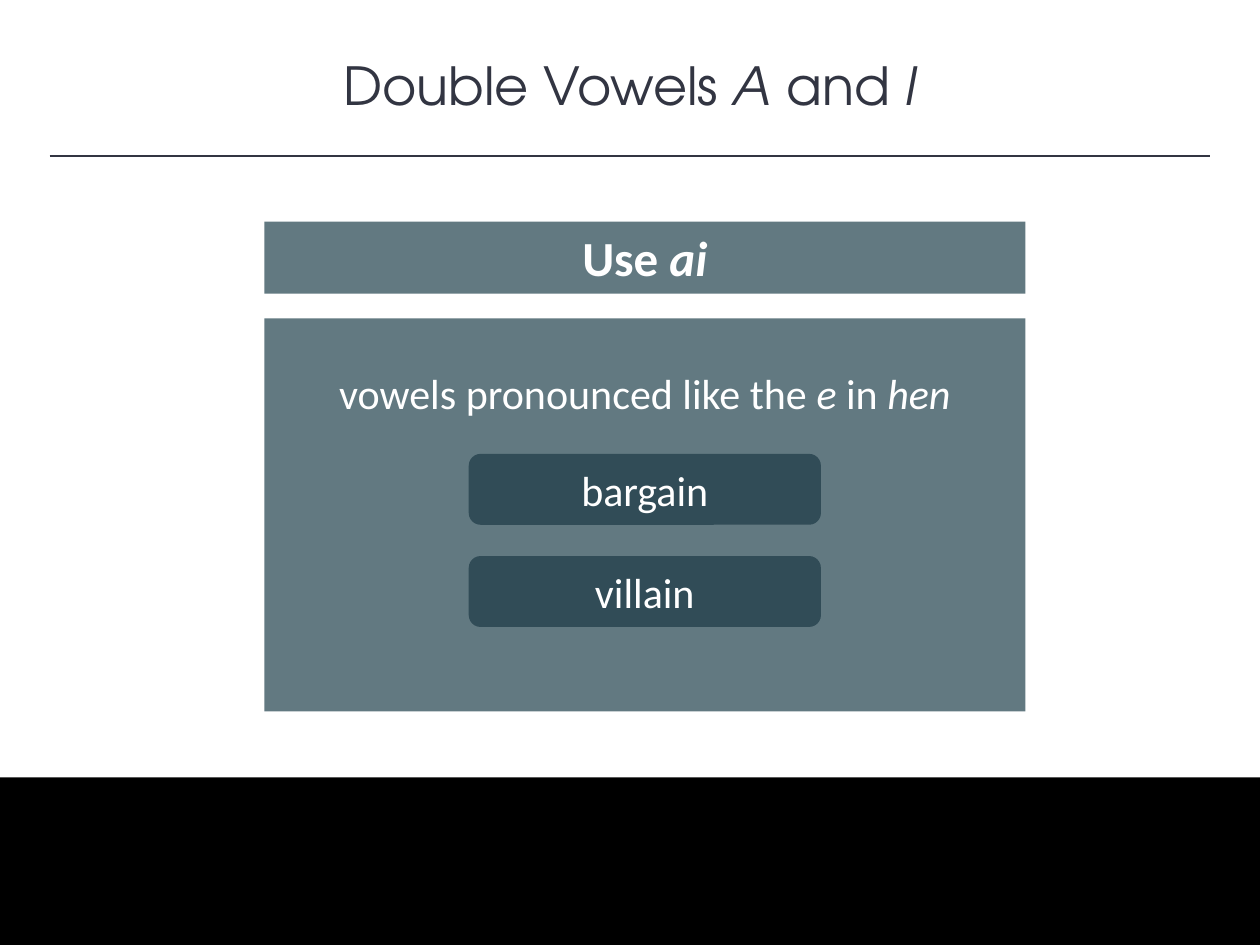
from pptx import Presentation
from pptx.dml.color import RGBColor
from pptx.enum.shapes import MSO_CONNECTOR as Connector, MSO_SHAPE as Shape
from pptx.enum.text import MSO_ANCHOR as Anchor, PP_ALIGN as Align
from pptx.oxml.ns import qn
from pptx.util import Cm, Pt
from lxml.etree import SubElement

COLOURS = {
    "paper": "FFFFFF",
    "ink": "323542",
    "panel": "627981",
    "word": "314C57",
    "band": "000000",
}
PAGE_WIDTH, PAGE_HEIGHT = 25.4, 19.05
PANEL_LEFT, PANEL_WIDTH = 5.33, 15.34
WORD_WIDTH, WORD_HEIGHT = 7.1, 1.43
WORD_TOP, WORD_STEP = 9.15, 2.06


def colour(name):
    return RGBColor.from_string(COLOURS[name])


def write(box, pieces, size=24, font="Calibri", ink="paper", bold=False,
          spacing=None, anchor=Anchor.TOP):
    frame = box.text_frame
    frame.word_wrap = True
    frame.vertical_anchor = anchor
    para = frame.paragraphs[0]
    para.alignment = Align.CENTER
    if spacing:
        para.line_spacing = spacing
    for index, piece in enumerate(pieces):
        span = para.add_run()
        span.text = piece
        span.font.name = font
        span.font.size = Pt(size)
        span.font.bold = bold
        span.font.italic = index % 2 == 1
        span.font.color.rgb = colour(ink)


class SlideBuilder:
    def __init__(self, deck):
        self.page = deck.slides.add_slide(deck.slide_layouts[6])
        self.page.background.fill.solid()
        self.page.background.fill.fore_color.rgb = colour("paper")

    def block(self, left, top, width, height, fill, kind=Shape.RECTANGLE):
        box = self.page.shapes.add_shape(kind, Cm(left), Cm(top), Cm(width), Cm(height))
        box.shadow.inherit = False
        box.fill.solid()
        box.fill.fore_color.rgb = colour(fill)
        box.line.fill.background()
        return box

    def label(self, left, top, width, height, pieces, **style):
        box = self.page.shapes.add_textbox(Cm(left), Cm(top), Cm(width), Cm(height))
        write(box, pieces, **style)

    def rule(self, left, right, top):
        line = self.page.shapes.add_connector(
            Connector.STRAIGHT, Cm(left), Cm(top), Cm(right), Cm(top))
        line.line.color.rgb = colour("ink")
        line.line.width = Pt(1)
        SubElement(line._element.spPr, qn("a:effectLst"))


def main():
    deck = Presentation()
    deck.slide_width, deck.slide_height = Cm(PAGE_WIDTH), Cm(PAGE_HEIGHT)
    slide = SlideBuilder(deck)

    slide.block(PANEL_LEFT, 6.42, PANEL_WIDTH, 7.92, "panel")
    header = slide.block(PANEL_LEFT, 4.47, PANEL_WIDTH, 1.45, "panel")
    write(header, ["Use ", "ai"], size=28, bold=True)
    slide.label(0, 0.94, PAGE_WIDTH, 1.55, ["Double Vowels ", "A", " and", " I"],
                size=30, font="TeX Gyre Adventor", ink="ink")
    slide.block(0, 15.67, PAGE_WIDTH, 3.38, "band")
    slide.rule(1, PAGE_WIDTH - 1, 3.15)
    slide.label(5.94, 6.78, 14.12, 1.63,
                ["vowels pronounced like the ", "e", " in ", "hen"], spacing=1.5)

    word_left = PANEL_LEFT + (PANEL_WIDTH - WORD_WIDTH) / 2
    for row, word in enumerate(["bargain", "villain"]):
        box = slide.block(word_left, WORD_TOP + row * WORD_STEP, WORD_WIDTH,
                          WORD_HEIGHT, "word", Shape.ROUNDED_RECTANGLE)
        write(box, [word], anchor=Anchor.MIDDLE)

    deck.save("out.pptx")


if __name__ == "__main__":
    main()
